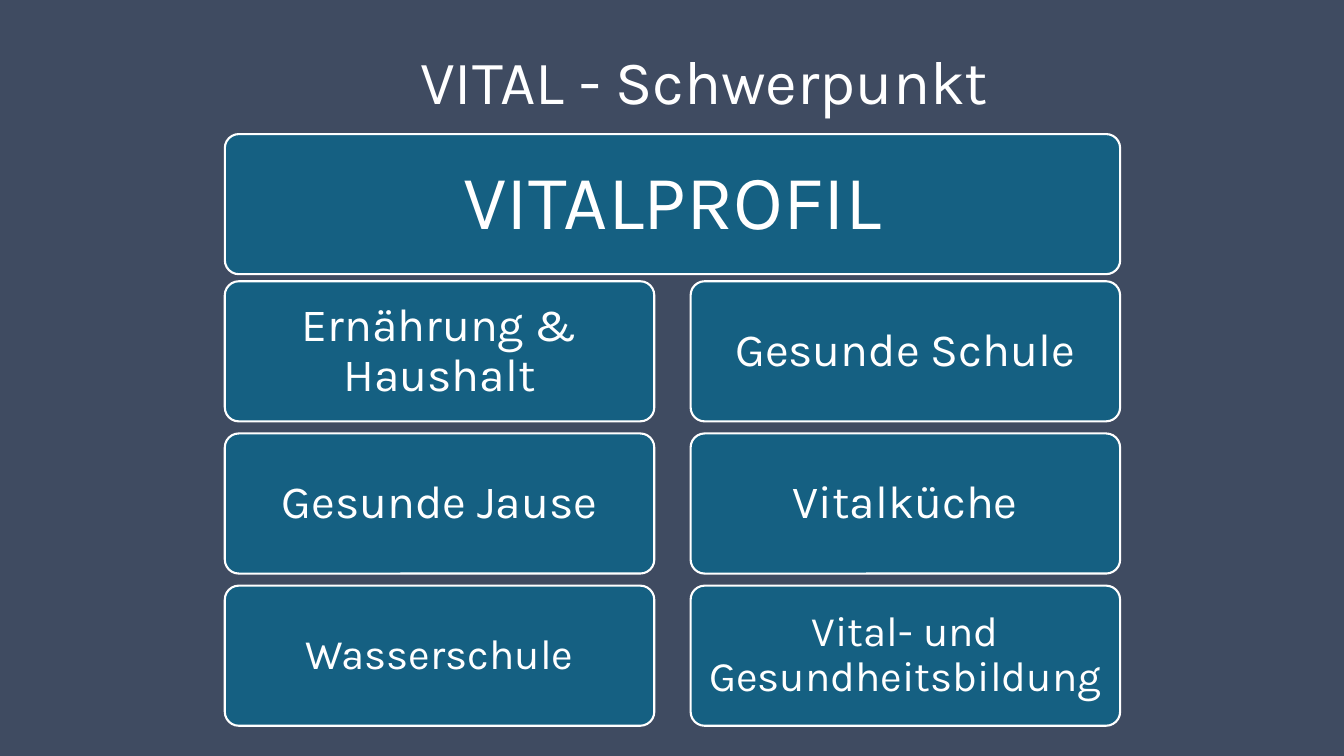
import pptx
import pptx.util
import pptx.dml.color
import pptx.enum.shapes
import pptx.enum.text
from dataclasses import dataclass

# Content
TITLE = "VITAL - Schwerpunkt"
HEAD = "VITALPROFIL"
ROWS = [
    ("Ernährung & Haushalt", "Gesunde Schule"),
    ("Gesunde Jause", "Vitalküche"),
    ("Wasserschule", "Vital- und Gesundheitsbildung"),
]


@dataclass(frozen=True)
class Theme:
    font: str = "Karla"
    back: str = "3F4B61"
    fill: str = "156082"
    ink: str = "FFFFFF"
    title: int = 44
    head: int = 55
    large: int = 33
    small: int = 30
    edge: float = 1.5


# Grid in inches
WIDE, HIGH = 13.33, 7.5
LEFT, TOP = 2.23, 1.33
CELL, GAP = 4.26, 0.36
TALL, STEP = 1.39, 1.51
FIRST = 2.79

theme = Theme()
inch = pptx.util.Inches
color = pptx.dml.color.RGBColor.from_string


def write(shape, text, size, pad, align):
    frame = shape.text_frame
    frame.word_wrap = True
    frame.vertical_anchor = pptx.enum.text.MSO_ANCHOR.MIDDLE
    frame.margin_left = frame.margin_right = inch(pad)
    frame.margin_top = frame.margin_bottom = inch(pad)
    frame.text = text
    para = frame.paragraphs[0]
    para.alignment = align
    para.line_spacing = 0.9
    font = para.runs[0].font
    font.name, font.size = theme.font, pptx.util.Pt(size)
    font.color.rgb = color(theme.ink)


def card(slide, text, x, y, width, size, pad):
    kind = pptx.enum.shapes.MSO_SHAPE.ROUNDED_RECTANGLE
    box = slide.shapes.add_shape(kind, inch(x), inch(y), inch(width), inch(TALL))
    box.adjustments[0] = 0.1
    box.shadow.inherit = False
    box.fill.solid()
    box.fill.fore_color.rgb = color(theme.fill)
    box.line.color.rgb = color(theme.ink)
    box.line.width = pptx.util.Pt(theme.edge)
    write(box, text, size, pad, pptx.enum.text.PP_ALIGN.CENTER)


def main():
    deck = pptx.Presentation()
    deck.slide_width, deck.slide_height = inch(WIDE), inch(HIGH)
    slide = deck.slides.add_slide(deck.slide_layouts[6])
    slide.background.fill.solid()
    slide.background.fill.fore_color.rgb = color(theme.back)

    # Title
    x = 4.07
    title = slide.shapes.add_textbox(inch(x), inch(0.43), inch(WIDE - x), inch(0.81))
    write(title, TITLE, theme.title, 0.1, pptx.enum.text.PP_ALIGN.LEFT)

    # Head card over both columns
    card(slide, HEAD, LEFT, TOP, 2 * CELL + GAP, theme.head, 0.23)

    # Topic cards, with smaller type in the last row
    for row, pair in enumerate(ROWS):
        last = row == len(ROWS) - 1
        size, pad = (theme.small, 0.12) if last else (theme.large, 0.14)
        for col, text in enumerate(pair):
            x = LEFT + col * (CELL + GAP)
            card(slide, text, x, FIRST + row * STEP, CELL, size, pad)

    deck.save("out.pptx")


if __name__ == "__main__":
    main()
